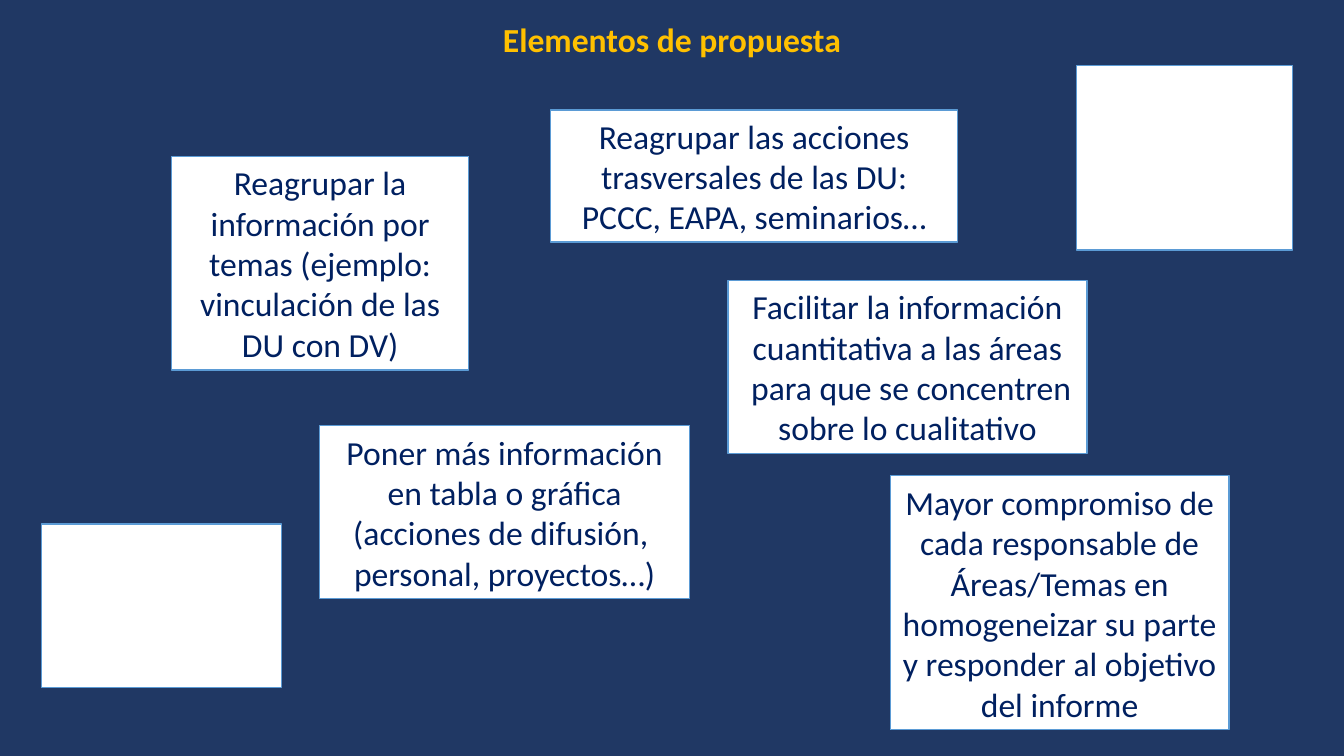
from pptx import Presentation
from pptx.dml.color import RGBColor
from pptx.enum.shapes import MSO_SHAPE
from pptx.enum.text import MSO_ANCHOR, MSO_AUTO_SIZE, PP_ALIGN
from pptx.util import Inches, Pt

RECTANGLE = MSO_SHAPE.RECTANGLE
CENTER = PP_ALIGN.CENTER
TOP = MSO_ANCHOR.TOP
MIDDLE = MSO_ANCHOR.MIDDLE
NO_AUTO_SIZE = MSO_AUTO_SIZE.NONE

NAVY = RGBColor(0x20, 0x38, 0x64)
GOLD = RGBColor(0xFF, 0xC0, 0x00)
WHITE = RGBColor(0xFF, 0xFF, 0xFF)
BLUE = RGBColor(0x5B, 0x9B, 0xD5)
INK = RGBColor(0x00, 0x20, 0x60)

TITLE = "Elementos de propuesta"
TITLE_BOX = (0, 0.14, 13.33, 0.5)
CARDS = [
    ((1.7, 1.55, 2.95, 2.12),
     "Reagrupar la información por temas (ejemplo: vinculación de las DU con DV)"),
    ((7.22, 2.78, 3.56, 1.72),
     "Facilitar la información cuantitativa a las áreas\n"
     " para que se concentren sobre lo cualitativo"),
    ((3.17, 4.22, 3.67, 1.72),
     "Poner más información en tabla o gráfica (acciones de difusión,  personal, proyectos…)"),
    ((5.46, 1.09, 4.04, 1.31),
     "Reagrupar las acciones trasversales de las DU: PCCC, EAPA, seminarios…"),
    ((8.83, 4.72, 3.36, 2.52),
     "Mayor compromiso de cada responsable de Áreas/Temas en homogeneizar su parte "
     "y responder al objetivo del informe"),
    ((0.41, 5.2, 2.38, 1.62), ""),
    ((10.68, 0.65, 2.14, 1.83), ""),
]


def write_text(shape, text, color, bold, anchor):
    frame = shape.text_frame
    frame.text = text
    frame.word_wrap = True
    frame.auto_size = NO_AUTO_SIZE
    frame.vertical_anchor = anchor
    frame.margin_left = frame.margin_right = Inches(0.1)
    frame.margin_top = frame.margin_bottom = Inches(0.05)
    for paragraph in frame.paragraphs:
        paragraph.alignment = CENTER
        paragraph.line_spacing = 1.0
        paragraph.space_before = Pt(0)
        for run in paragraph.runs:
            run.font.name = "Calibri"
            run.font.size = Pt(24)
            run.font.bold = bold
            run.font.color.rgb = color


def add_title(slide):
    title = slide.shapes.title
    title.left, title.top, title.width, title.height = map(Inches, TITLE_BOX)
    write_text(title, TITLE, GOLD, True, TOP)


def add_card(slide, box, text):
    card = slide.shapes.add_shape(RECTANGLE, *map(Inches, box))
    card.shadow.inherit = False
    card.fill.solid()
    card.fill.fore_color.rgb = WHITE
    card.line.color.rgb = BLUE
    card.line.width = Pt(1)
    if text:
        write_text(card, text, INK, False, MIDDLE)


def main():
    presentation = Presentation()
    presentation.slide_width = Inches(13.33)
    presentation.slide_height = Inches(7.5)
    slide = presentation.slides.add_slide(presentation.slide_layouts[5])
    slide.background.fill.solid()
    slide.background.fill.fore_color.rgb = NAVY
    add_title(slide)
    for box, text in CARDS:
        add_card(slide, box, text)
    presentation.save("out.pptx")


if __name__ == "__main__":
    main()
